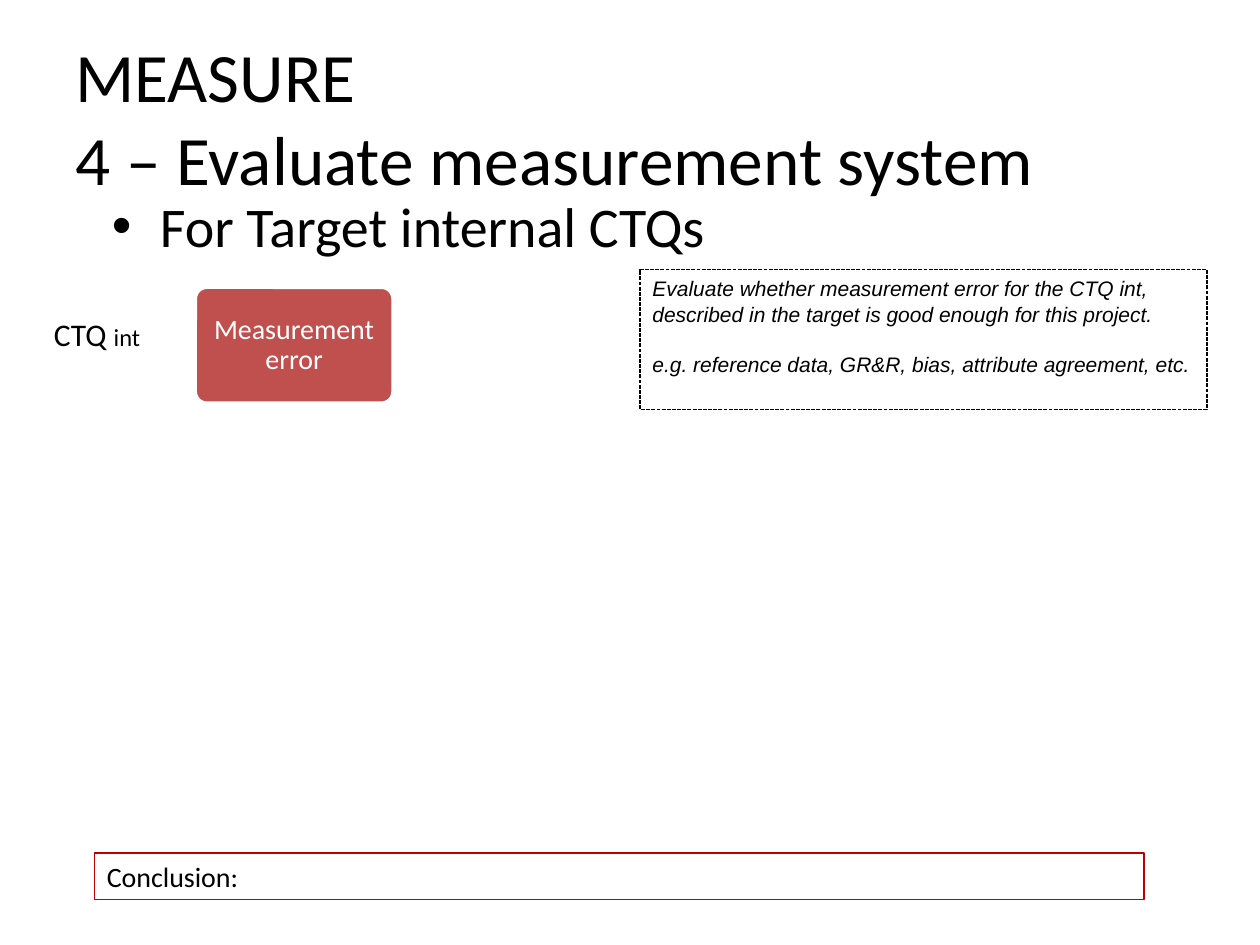
from pptx import Presentation
from pptx.dml.color import RGBColor
from pptx.enum.dml import MSO_LINE
from pptx.enum.shapes import MSO_SHAPE
from pptx.enum.text import MSO_ANCHOR, PP_ALIGN
from pptx.oxml import parse_xml
from pptx.oxml.ns import nsdecls
from pptx.util import Inches, Pt

RECT, ROUNDED = MSO_SHAPE.RECTANGLE, MSO_SHAPE.ROUNDED_RECTANGLE
TOP, MIDDLE = MSO_ANCHOR.TOP, MSO_ANCHOR.MIDDLE
LEFT, CENTER = PP_ALIGN.LEFT, PP_ALIGN.CENTER
DASH = MSO_LINE.SQUARE_DOT
COLORS = {"text": "000000", "paper": "FFFFFF", "error": "C0504D", "conclusion": "C00000"}


def color(name):
    """Return the named palette colour."""
    return RGBColor.from_string(COLORS[name])


def format_text(tf, size, font="Calibri", fill="text", align=LEFT, anchor=TOP, italic=False):
    """Wrap, align and style all text in a frame."""
    tf.word_wrap = True
    tf.vertical_anchor = anchor
    for p in tf.paragraphs:
        p.alignment = align
        for r in p.runs:
            r.font.size, r.font.name, r.font.italic = Pt(size), font, italic
            r.font.color.rgb = color(fill)


def add_box(s, box, kind, fill, line, width):
    """Add a flat shape, unfilled when fill is None."""
    sp = s.shapes.add_shape(kind, *map(Inches, box))
    sp.shadow.inherit = False
    if fill:
        sp.fill.solid()
        sp.fill.fore_color.rgb = color(fill)
    else:
        sp.fill.background()
    sp.line.color.rgb = color(line)
    sp.line.width = Pt(width)
    return sp


def add_title(s, box):
    """Place the two-line title."""
    sp = s.shapes.title
    sp.left, sp.top, sp.width, sp.height = map(Inches, box)
    sp.text_frame.text = "MEASURE\v4 – Evaluate measurement system"
    format_text(sp.text_frame, 39.6, anchor=MIDDLE)


def add_body(s, box):
    """Add the bulleted subject line."""
    tf = s.shapes.add_textbox(*map(Inches, box)).text_frame
    tf.text = "For Target internal CTQs"
    format_text(tf, 32)
    p = tf.paragraphs[0]
    p.space_before = Pt(6.4)
    pPr = p._p.get_or_add_pPr()
    pPr.set("marL", str(Inches(0.38)))
    pPr.set("indent", str(-Inches(0.38)))
    pPr.append(parse_xml(f'<a:buFont {nsdecls("a")} typeface="Arial"/>'))
    pPr.append(parse_xml(f'<a:buChar {nsdecls("a")} char="•"/>'))


def add_guidance(s, box):
    """Add the dashed guidance note."""
    sp = add_box(s, box, RECT, "paper", "text", 0.75)
    sp.line.dash_style = DASH
    tf = sp.text_frame
    tf.text = ("Evaluate whether measurement error for the CTQ int, "
               "described in the target is good enough for this project.")
    tf.add_paragraph().text = "e.g. reference data, GR&R, bias, attribute agreement, etc."
    tf.paragraphs[0].space_after = Pt(14.4)
    format_text(tf, 12, font="Arial", italic=True)


def add_conclusion(s, box):
    """Add the outlined conclusion bar."""
    tf = add_box(s, box, RECT, None, "conclusion", 0.75).text_frame
    tf.text = "Conclusion:"
    format_text(tf, 16)


def add_ctq_label(s, box):
    """Add the CTQ label with its smaller suffix."""
    tf = s.shapes.add_textbox(*map(Inches, box)).text_frame
    p = tf.paragraphs[0]
    for text in ("CTQ ", "int"):
        p.add_run().text = text
    format_text(tf, 18)
    p.runs[1].font.size = Pt(14)


def add_error_box(s, box):
    """Add the rounded measurement error box."""
    sp = add_box(s, box, ROUNDED, "error", "paper", 2)
    sp.adjustments[0] = 0.1
    tf = sp.text_frame
    tf.margin_left = tf.margin_right = tf.margin_top = tf.margin_bottom = Inches(0.07)
    tf.text = "Measurement error"
    tf.paragraphs[0].line_spacing = 0.9
    format_text(tf, 16, fill="paper", align=CENTER, anchor=MIDDLE)


def main():
    """Build and save the slide."""
    prs = Presentation()
    prs.slide_width, prs.slide_height = Inches(10), Inches(7.5)
    s = prs.slides.add_slide(prs.slide_layouts[5])
    add_title(s, (0.5, 0.3, 9, 1.25))
    add_body(s, (0.79, 1.47, 8.66, 5.51))
    add_guidance(s, (5.08, 2.14, 4.5, 1.11))
    add_conclusion(s, (0.75, 6.77, 8.33, 0.37))
    add_ctq_label(s, (0.33, 2.45, 1.5, 0.4))
    add_error_box(s, (1.55, 2.28, 1.57, 0.92))
    prs.save("out.pptx")


if __name__ == "__main__":
    main()
